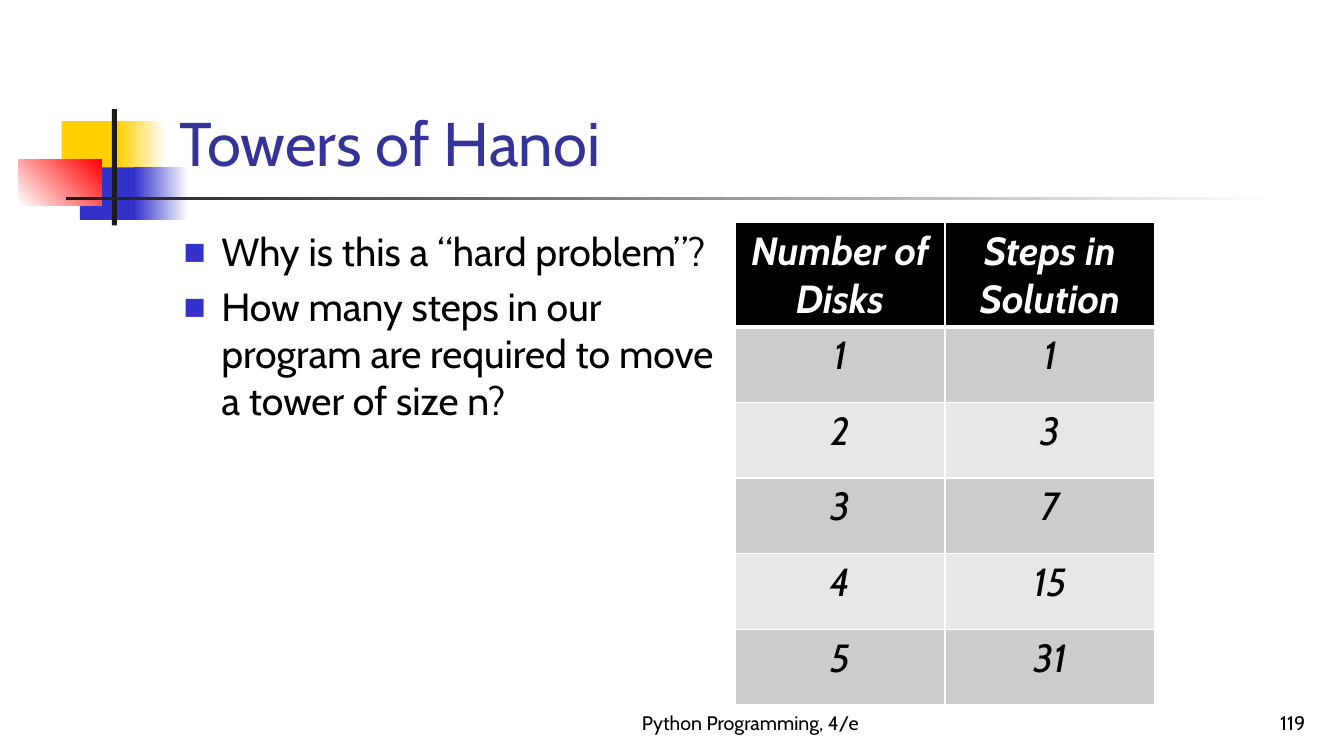
import pptx
import pptx.util
import pptx.oxml
import pptx.oxml.ns
import pptx.dml.color
import pptx.enum.shapes
import pptx.enum.text

Pt = pptx.util.Pt
RGB = pptx.dml.color.RGBColor
Align = pptx.enum.text.PP_ALIGN
Anchor = pptx.enum.text.MSO_ANCHOR

WHITE = RGB(0xFF, 0xFF, 0xFF)
BLACK = RGB(0, 0, 0)
GOLD = RGB(0xFF, 0xCF, 0x01)
BLUE = RGB(0x33, 0x33, 0xCC)
RED = RGB(0xFF, 0, 0)
INK = RGB(0x1C, 0x1C, 0x1C)
NAVY = RGB(0x33, 0x33, 0x99)
GRAY = RGB(0xCC, 0xCC, 0xCC)
PALE = RGB(0xE7, 0xE7, 0xE7)


class Page:
    font = "Cabin"
    size = 28
    gap = 5.6
    hang = 27

    def __init__(self, deck):
        self.slide = deck.slides.add_slide(deck.slide_layouts[6])
        self.shapes = self.slide.shapes

    def block(self, box, color, fade=None, angle=0):
        shape = self.shapes.add_shape(
            pptx.enum.shapes.MSO_SHAPE.RECTANGLE, *map(Pt, box))
        shape.shadow.inherit = False
        shape.line.fill.background()
        if fade is None:
            shape.fill.solid()
            shape.fill.fore_color.rgb = color
            return
        shape.fill.gradient()
        shape.fill.gradient_angle = angle
        for stop, tone, place in zip(shape.fill.gradient_stops, (color, fade), (0, 1)):
            stop.color.rgb = tone
            stop.position = place

    def style(self, par, size, color, align=Align.LEFT, bold=False, slant=False):
        par.alignment = align
        for run in par.runs:
            font = run.font
            font.name = self.font
            font.size = Pt(size)
            font.color.rgb = color
            font.bold = bold
            font.italic = slant

    def text(self, box, words, size, color=BLACK, align=Align.LEFT, anchor=Anchor.BOTTOM):
        frame = self.shapes.add_textbox(*map(Pt, box)).text_frame
        frame.word_wrap = True
        frame.vertical_anchor = anchor
        frame.text = words
        for par in frame.paragraphs:
            self.style(par, size, color, align)
        return frame

    def list(self, box, items):
        frame = self.text(box, "\n".join(items), self.size, anchor=Anchor.TOP)
        for par in frame.paragraphs:
            par.space_before = Pt(self.gap)
            props = par._p.get_or_add_pPr()
            props.set("marL", str(Pt(self.hang)))
            props.set("indent", str(-Pt(self.hang)))
            for mark in (
                f'<a:buClr %s><a:srgbClr val="{BLUE}"/></a:buClr>',
                '<a:buSzPct %s val="60000"/>',
                f'<a:buFont %s typeface="{self.font}"/>',
                '<a:buChar %s char="■"/>',
            ):
                props.append(pptx.oxml.parse_xml(mark % pptx.oxml.ns.nsdecls("a")))

    def edge(self, cell, row):
        props = cell._tc.get_or_add_tcPr()
        width = {"L": 1, "R": 1, "T": 3 if row == 1 else 1, "B": 3 if row == 0 else 1}
        for spot, (side, wide) in enumerate(width.items()):
            props.insert(spot, pptx.oxml.parse_xml(
                f'<a:ln{side} {pptx.oxml.ns.nsdecls("a")} w="{Pt(wide)}">'
                f'<a:solidFill><a:srgbClr val="{WHITE}"/></a:solidFill></a:ln{side}>'))

    def table(self, left, top, wide, head, tall, data):
        count = len(data[0])
        full = head + tall * (len(data) - 1)
        grid = self.shapes.add_table(
            len(data), count, Pt(left), Pt(top), Pt(wide * count), Pt(full)).table
        for col in grid.columns:
            col.width = Pt(wide)
        for row, line in enumerate(data):
            first = row == 0
            grid.rows[row].height = Pt(head if first else tall)
            for col, word in enumerate(line):
                cell = grid.cell(row, col)
                cell.fill.solid()
                cell.fill.fore_color.rgb = BLACK if first else GRAY if row % 2 else PALE
                self.edge(cell, row)
                cell.text_frame.text = str(word)
                par = cell.text_frame.paragraphs[0]
                par.space_before = Pt(self.gap)
                self.style(par, self.size, WHITE if first else BLACK,
                           Align.CENTER, first, True)


def main():
    deck = pptx.Presentation()
    deck.slide_width = Pt(960)
    deck.slide_height = Pt(540)
    page = Page(deck)

    page.block((44, 86.5, 46, 37.5), GOLD)
    page.block((84, 86.5, 34.5, 37.5), GOLD, WHITE)
    page.block((57, 119.5, 44.5, 37.5), BLUE)
    page.block((96, 119.5, 38.5, 37.5), BLUE, WHITE)
    page.block((13.5, 114, 59, 33), WHITE, RED, 45)
    page.block((80, 78, 3.5, 83), INK)
    page.block((47, 140.5, 864, 2.5), INK, WHITE)

    page.text((384, 492, 304, 36), "Python Programming, 4/e", 14, align=Align.CENTER)
    page.text((739.5, 492, 200, 36), "119", 14, align=Align.RIGHT)
    page.text((121, 16.5, 818, 115), "Towers of Hanoi", 44, NAVY)
    page.list((124, 159, 400, 324), (
        "Why is this a “hard problem”?",
        "How many steps in our program are required to move a tower of size n?",
    ))
    steps = [(disks, 2 ** disks - 1) for disks in range(1, 6)]
    page.table(525, 159, 150, 74, 54, [("Number of Disks", "Steps in Solution")] + steps)

    deck.save("out.pptx")


if __name__ == "__main__":
    main()
